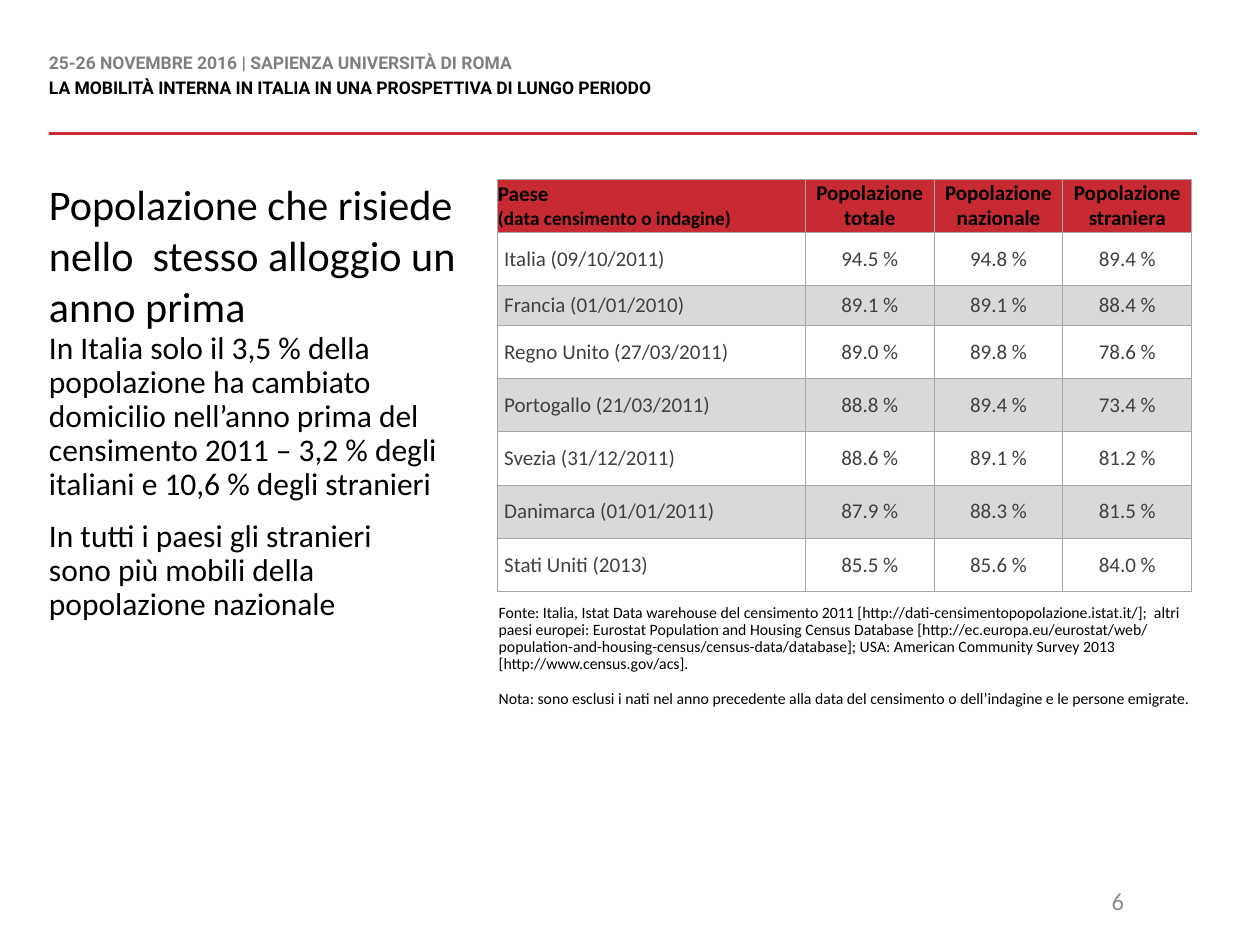
"""Build the slide on residents living in the same home one year earlier."""
from dataclasses import dataclass

from lxml import etree
from pptx import Presentation
from pptx.dml.color import RGBColor
from pptx.enum.shapes import MSO_CONNECTOR
from pptx.enum.text import MSO_ANCHOR, PP_ALIGN
from pptx.oxml.ns import qn
from pptx.util import Pt

LEFT, CENTER, RIGHT = PP_ALIGN.LEFT, PP_ALIGN.CENTER, PP_ALIGN.RIGHT
TOP, MIDDLE = MSO_ANCHOR.TOP, MSO_ANCHOR.MIDDLE
STRAIGHT = MSO_CONNECTOR.STRAIGHT


@dataclass(frozen=True)
class Theme:
    body: str = "Calibri"
    head: str = "Roboto"
    black: str = "000000"
    white: str = "FFFFFF"
    red: str = "C72A31"
    gray: str = "808080"
    number: str = "8C8C8C"
    cell: str = "404040"
    band: str = "D9D9D9"
    border: str = "A6A6A6"
    title_size: float = 24.1
    body_size: float = 18
    number_size: float = 14
    table_size: float = 12
    sub_size: float = 11
    head_size: float = 10
    note_size: float = 9


T = Theme()


def write(tf, lines, align=LEFT, spacing=None, before=0, after=0):
    for i, (text, size, color, bold, font) in enumerate(lines):
        p = tf.add_paragraph() if i else tf.paragraphs[0]
        p.alignment = align
        p.line_spacing = spacing
        p.space_before, p.space_after = Pt(before), Pt(after)
        r = p.add_run()
        r.text = text
        r.font.size, r.font.bold, r.font.name = Pt(size), bold, font
        r.font.color.rgb = RGBColor.from_string(color)


def add_text(x, y, w, h, lines, inset=(0, 0), anchor=TOP, **style):
    tf = s.shapes.add_textbox(Pt(x), Pt(y), Pt(w), Pt(h)).text_frame
    tf.word_wrap = True
    tf.vertical_anchor = anchor
    tf.margin_left = tf.margin_right = Pt(inset[0])
    tf.margin_top = tf.margin_bottom = Pt(inset[1])
    write(tf, lines, **style)


prs = Presentation()
prs.slide_width, prs.slide_height = Pt(720), Pt(540)
s = prs.slides.add_slide(prs.slide_layouts[6])

rule = s.shapes.add_connector(STRAIGHT, Pt(684), Pt(76.3), Pt(28), Pt(76.3))
rule.line.color.rgb = RGBColor.from_string(T.red)
rule.line.width = Pt(2)
etree.SubElement(rule._element.spPr, qn("a:effectLst"))

add_text(433.4, 500.4, 216, 28.8, [("6", T.number_size, T.number, False, T.body)],
         inset=(7.2, 3.6), anchor=MIDDLE, align=RIGHT)

comments = [
    "In Italia solo il 3,5 % della popolazione ha cambiato domicilio nell’anno prima del "
    "censimento 2011 – 3,2 % degli italiani e 10,6 % degli stranieri",
    "In tutti i paesi gli stranieri sono più mobili della popolazione nazionale",
]
add_text(28, 190, 222, 196, [(t, T.body_size, T.black, False, T.body) for t in comments],
         spacing=0.9, before=10)

title = "Popolazione che risiede nello  stesso alloggio un anno prima"
add_text(28, 102.2, 246, 103.7, [(title, T.title_size, T.black, False, T.body)])

header = ["Paese", "Popolazione totale", "Popolazione nazionale", "Popolazione straniera"]
rows = [
    ("Italia (09/10/2011)", "94.5 %", "94.8 %", "89.4 %"),
    ("Francia (01/01/2010)", "89.1 %", "89.1 %", "88.4 %"),
    ("Regno Unito (27/03/2011)", "89.0 %", "89.8 %", "78.6 %"),
    ("Portogallo (21/03/2011)", "88.8 %", "89.4 %", "73.4 %"),
    ("Svezia (31/12/2011)", "88.6 %", "89.1 %", "81.2 %"),
    ("Danimarca (01/01/2011)", "87.9 %", "88.3 %", "81.5 %"),
    ("Stati Uniti (2013)", "85.5 %", "85.6 %", "84.0 %"),
]
widths = [175.7, 73.6, 73.6, 73.6]
heights = [30.5, 30.5, 22.5] + [30.5] * 5
table = s.shapes.add_table(len(heights), len(widths), Pt(284.5), Pt(102.4),
                           Pt(sum(widths)), Pt(sum(heights))).table
for col, width in zip(table.columns, widths):
    col.width = Pt(width)
for row, height in zip(table.rows, heights):
    row.height = Pt(height)

for i, values in enumerate([header, *rows]):
    fill = T.red if i == 0 else T.white if i % 2 else T.band
    for j, value in enumerate(values):
        cell = table.cell(i, j)
        cell.vertical_anchor = MIDDLE
        cell.margin_left = cell.margin_right = Pt(3.6 if i or j else 0)
        cell.margin_top = cell.margin_bottom = Pt(0)
        lines = [(value, T.table_size, T.cell if i else T.black, i == 0, T.body)]
        if i == j == 0:
            lines.append(("(data censimento o indagine)", T.sub_size, T.black, True, T.body))
        write(cell.text_frame, lines, align=CENTER if j else LEFT)
        tcPr = cell._tc.get_or_add_tcPr()
        for side in ("a:lnL", "a:lnR", "a:lnT", "a:lnB"):
            ln = etree.SubElement(tcPr, qn(side), w=str(Pt(0.75)))
            solid = etree.SubElement(ln, qn("a:solidFill"))
            etree.SubElement(solid, qn("a:srgbClr"), val=T.border)
        cell.fill.solid()
        cell.fill.fore_color.rgb = RGBColor.from_string(fill)

headings = [
    ("25-26 NOVEMBRE 2016 | SAPIENZA UNIVERSITÀ DI ROMA", T.gray),
    ("LA MOBILITÀ INTERNA IN ITALIA IN UNA PROSPETTIVA DI LUNGO PERIODO", T.black),
]
add_text(28, 31, 437, 36.7, [(t, T.head_size, c, True, T.head) for t, c in headings],
         spacing=Pt(11), after=3)

notes = [
    "Fonte: Italia, Istat Data warehouse del censimento 2011 "
    "[http://dati-censimentopopolazione.istat.it/];  altri paesi europei: Eurostat Population "
    "and Housing Census Database [http://ec.europa.eu/eurostat/web/ "
    "population-and-housing-census/census-data/database]; USA: American Community Survey 2013 "
    "[http://www.census.gov/acs].",
    "Nota: sono esclusi i nati nel anno precedente alla data del censimento o dell’indagine "
    "e le persone emigrate.",
]
add_text(285, 345.6, 396, 85.7, [(t, T.note_size, T.black, False, T.body) for t in notes],
         spacing=0.9, before=10)

prs.save("out.pptx")
